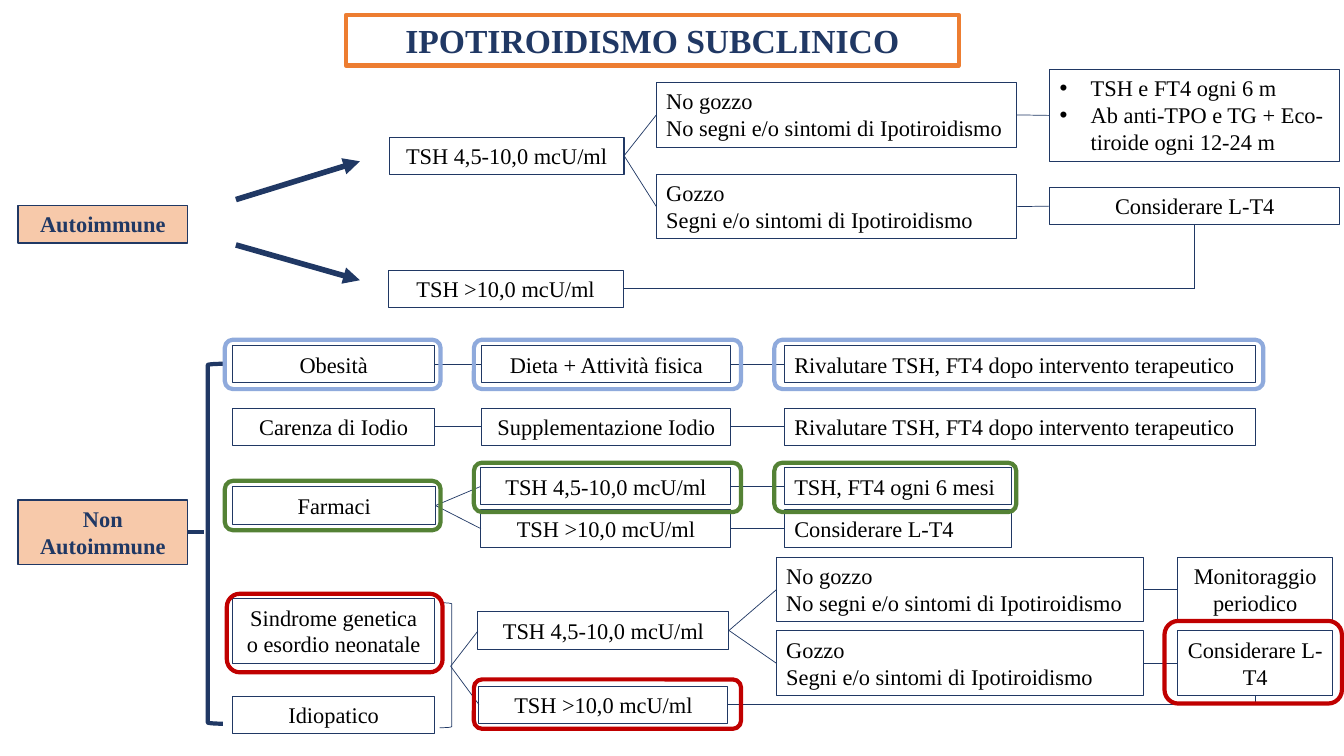
from lxml.etree import SubElement
from pptx import Presentation
from pptx.dml.color import RGBColor
from pptx.enum.shapes import MSO_CONNECTOR, MSO_SHAPE
from pptx.enum.text import MSO_AUTO_SIZE, PP_ALIGN
from pptx.oxml.ns import qn
from pptx.util import Inches, Pt

NAVY, ORANGE, BLACK = "203864", "ED7D31", "000000"
BLUE, GREEN, RED = "8FAADC", "548235", "C00000"
ONE_LINE, TWO_LINES, THREE_LINES = 0.37, 0.64, 0.91
LEFT_SITE, RIGHT_SITE = 1, 3


def color(hex_string):
    return RGBColor.from_string(hex_string)


class FlowSlide:
    font = "Times New Roman"

    def __init__(self, slide):
        self.slide = slide

    def outline(self, line, line_color, width):
        line.color.rgb = color(line_color)
        line.width = Pt(width)

    def box(self, left, top, width, height, *texts, align=PP_ALIGN.CENTER, size=16,
            text_color=BLACK, bold=False, line_color=NAVY, line_width=0.75, bullets=False):
        shape = self.slide.shapes.add_textbox(
            Inches(left), Inches(top), Inches(width), Inches(height))
        self.outline(shape.line, line_color, line_width)
        frame = shape.text_frame
        frame.word_wrap = True
        frame.auto_size = MSO_AUTO_SIZE.SHAPE_TO_FIT_TEXT
        for index, text in enumerate(texts):
            paragraph = frame.add_paragraph() if index else frame.paragraphs[0]
            paragraph.alignment = align
            run = paragraph.add_run()
            run.text = text
            run.font.name = self.font
            run.font.size = Pt(size)
            run.font.bold = bold
            run.font.color.rgb = color(text_color)
            if bullets:
                self.bullet(paragraph)
        return shape

    def bullet(self, paragraph):
        properties = paragraph._p.get_or_add_pPr()
        properties.set("marL", str(Inches(0.31)))
        properties.set("indent", str(Inches(-0.31)))
        SubElement(properties, qn("a:buFont"), typeface="Arial")
        SubElement(properties, qn("a:buChar"), char="•")

    def left_box(self, *arguments):
        return self.box(*arguments, align=PP_ALIGN.LEFT)

    def category(self, top, height, text):
        shape = self.box(0.18, top, 1.68, height, text,
                         text_color=NAVY, bold=True, line_width=1)
        shape.fill.solid()
        shape.fill.fore_color.rgb = color(ORANGE)
        fill_color = shape.fill._xPr.find(qn("a:solidFill"))[0]
        SubElement(fill_color, qn("a:alpha"), val="41000")
        return shape

    def line(self, x1, y1, x2, y2, width=0.5, arrow=False):
        connector = self.slide.shapes.add_connector(
            MSO_CONNECTOR.STRAIGHT, Inches(x1), Inches(y1), Inches(x2), Inches(y2))
        self.outline(connector.line, NAVY, width)
        if arrow:
            SubElement(connector.line._get_or_add_ln(), qn("a:tailEnd"), type="triangle")
        SubElement(connector._element.spPr, qn("a:effectLst"))
        return connector

    def link(self, source, *targets):
        for target in targets:
            connector = self.line(0, 0, 1, 1)
            connector.begin_connect(source, RIGHT_SITE)
            connector.end_connect(target, LEFT_SITE)

    def outlined_shape(self, kind, left, top, width, height, line_color, line_width):
        shape = self.slide.shapes.add_shape(
            kind, Inches(left), Inches(top), Inches(width), Inches(height))
        shape.shadow.inherit = False
        shape.fill.background()
        self.outline(shape.line, line_color, line_width)


def main():
    presentation = Presentation()
    presentation.slide_width, presentation.slide_height = Inches(13.33), Inches(7.5)
    flow = FlowSlide(presentation.slides.add_slide(presentation.slide_layouts[6]))

    mid_tsh, high_tsh = "TSH 4,5-10,0 mcU/ml", "TSH >10,0 mcU/ml"
    treat = "Considerare L-T4"
    recheck = "Rivalutare TSH, FT4 dopo intervento terapeutico"
    no_goitre = ("No gozzo", "No segni e/o sintomi di Ipotiroidismo")
    goitre = ("Gozzo", "Segni e/o sintomi di Ipotiroidismo")

    # Title and the two categories
    flow.box(3.43, 0.15, 6.08, 0.5, "IPOTIROIDISMO SUBCLINICO", size=24,
             text_color=NAVY, bold=True, line_color=ORANGE, line_width=3)
    flow.category(2.04, ONE_LINE, "Autoimmune")
    flow.category(4.96, TWO_LINES, "Non Autoimmune")

    # Autoimmune branch
    flow.line(2.34, 1.98, 3.57, 1.6, width=4, arrow=True)
    flow.line(2.34, 2.43, 3.57, 2.78, width=4, arrow=True)
    auto_mid = flow.box(3.86, 1.36, 2.33, ONE_LINE, mid_tsh)
    flow.box(3.85, 2.68, 2.33, ONE_LINE, high_tsh)
    auto_no_goitre = flow.left_box(6.51, 0.82, 3.57, TWO_LINES, *no_goitre)
    auto_goitre = flow.left_box(6.51, 1.73, 3.57, TWO_LINES, *goitre)
    auto_follow = flow.box(10.41, 0.69, 2.88, THREE_LINES, "TSH e FT4 ogni 6 m",
                           "Ab anti-TPO e TG + Eco-tiroide ogni 12-24 m",
                           align=PP_ALIGN.LEFT, bullets=True)
    auto_treat = flow.box(10.41, 1.86, 2.88, ONE_LINE, treat)
    flow.link(auto_mid, auto_no_goitre, auto_goitre)
    flow.link(auto_no_goitre, auto_follow)
    flow.link(auto_goitre, auto_treat)
    flow.line(6.18, 2.86, 11.85, 2.86)
    flow.line(11.85, 2.86, 11.85, 2.23)

    # Non-autoimmune bracket
    flow.outlined_shape(MSO_SHAPE.LEFT_BRACKET, 2.06, 3.61, 0.15, 3.57, NAVY, 3)
    flow.line(1.86, 5.28, 2.02, 5.28, width=3)

    # Obesity and iodine deficiency
    for top, cause, action in ((3.43, "Obesità", "Dieta + Attività fisica"),
                               (4.05, "Carenza di Iodio", "Supplementazione Iodio")):
        cause_box = flow.box(2.31, top, 2, ONE_LINE, cause)
        action_box = flow.box(4.78, top, 2.47, ONE_LINE, action)
        recheck_box = flow.left_box(7.78, top, 4.67, ONE_LINE, recheck)
        flow.link(cause_box, action_box)
        flow.link(action_box, recheck_box)

    # Drugs
    drugs = flow.box(2.31, 4.83, 2.01, ONE_LINE, "Farmaci")
    for top, level, action in ((4.64, mid_tsh, "TSH, FT4 ogni 6 mesi"),
                               (5.06, high_tsh, treat)):
        level_box = flow.box(4.77, top, 2.48, ONE_LINE, level)
        action_box = flow.left_box(7.78, top, 2.25, ONE_LINE, action)
        flow.link(drugs, level_box)
        flow.link(level_box, action_box)

    # Genetic, neonatal and idiopathic forms
    flow.box(2.31, 5.94, 2, TWO_LINES, "Sindrome genetica o esordio neonatale")
    flow.box(2.31, 6.91, 2, ONE_LINE, "Idiopatico")
    flow.outlined_shape(MSO_SHAPE.RIGHT_BRACKET, 4.36, 5.98, 0.12, 1.24, NAVY, 0.5)
    other_mid = flow.box(4.74, 6.07, 2.49, ONE_LINE, mid_tsh)
    flow.box(4.75, 6.81, 2.47, ONE_LINE, high_tsh)
    flow.line(4.47, 6.61, 4.74, 6.26)
    flow.line(4.47, 6.61, 4.75, 6.99)
    for top, signs, action in ((5.53, no_goitre, "Monitoraggio periodico"),
                               (6.26, goitre, treat)):
        signs_box = flow.left_box(7.7, top, 3.64, TWO_LINES, *signs)
        action_box = flow.box(11.68, top, 1.54, TWO_LINES, action)
        flow.link(other_mid, signs_box)
        flow.link(signs_box, action_box)
    flow.line(7.22, 6.99, 12.45, 6.99)
    flow.line(12.45, 6.99, 12.45, 6.9)

    # Coloured highlight frames
    for left, top, width, height, frame_color in (
            (2.23, 3.37, 2.14, 0.49, BLUE),
            (4.7, 3.37, 2.65, 0.49, BLUE),
            (7.68, 3.37, 4.85, 0.49, BLUE),
            (2.23, 4.77, 2.14, 0.49, GREEN),
            (4.7, 4.59, 2.65, 0.49, GREEN),
            (7.68, 4.59, 2.4, 0.49, GREEN),
            (2.25, 5.89, 2.14, 0.78, RED),
            (4.7, 6.74, 2.65, 0.49, RED),
            (11.55, 6.16, 1.76, 0.82, RED)):
        flow.outlined_shape(MSO_SHAPE.ROUNDED_RECTANGLE, left, top, width, height,
                            frame_color, 3)

    presentation.save("out.pptx")


if __name__ == "__main__":
    main()
